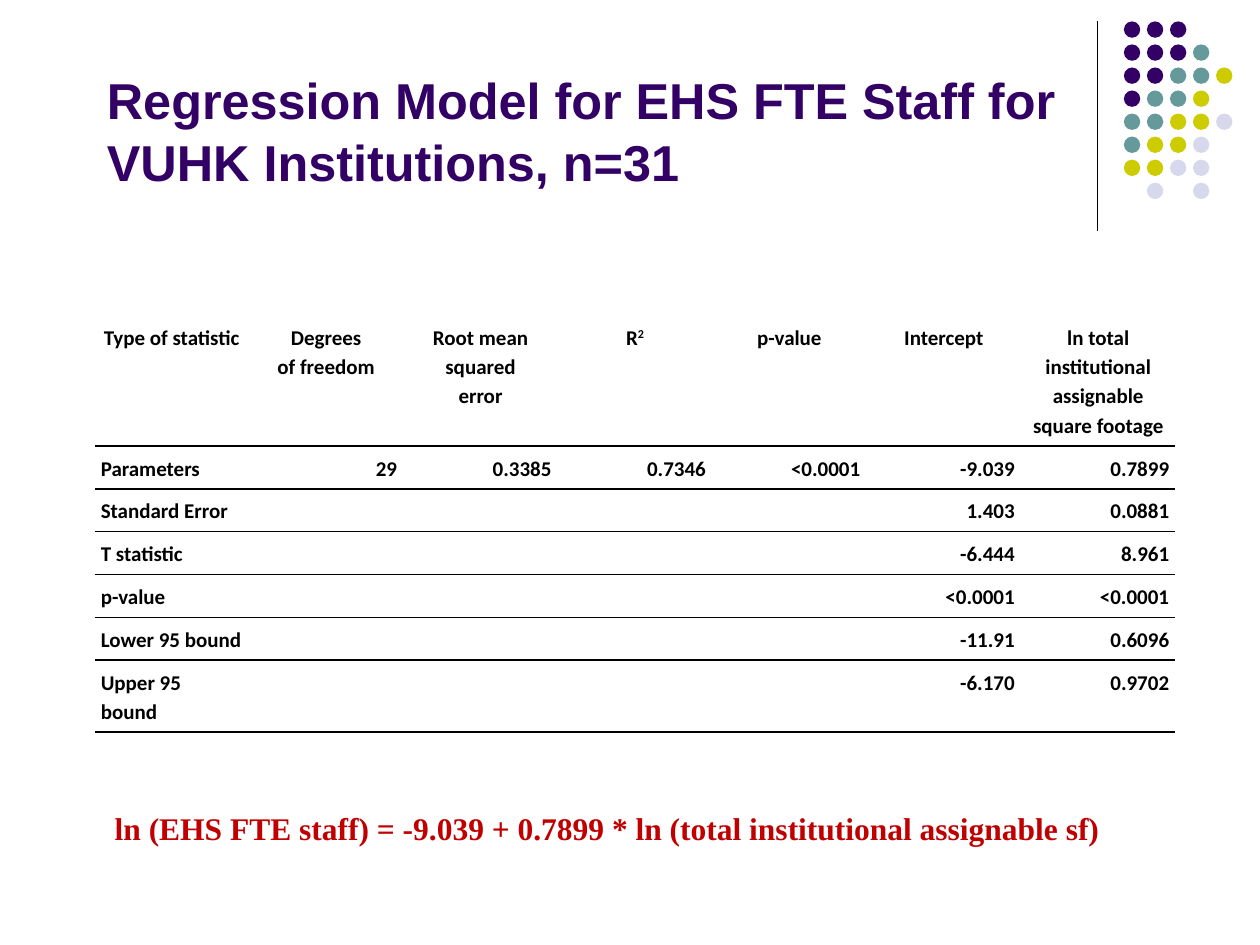
from dataclasses import dataclass

from lxml import etree
from pptx import Presentation
from pptx.dml.color import RGBColor
from pptx.enum.shapes import MSO_CONNECTOR, MSO_SHAPE
from pptx.enum.text import MSO_ANCHOR, PP_ALIGN
from pptx.oxml import parse_xml
from pptx.oxml.ns import nsdecls, qn
from pptx.util import Inches, Pt


@dataclass(frozen=True)
class Theme:
    purple: str = "330066"
    teal: str = "669999"
    lime: str = "CCCC00"
    lavender: str = "D8D8EC"
    black: str = "000000"
    red: str = "C00000"
    title_size: float = 28.8
    formula_size: float = 18
    table_size: float = 12


THEME = Theme()
NO_STYLE = "{2D5ABB26-0587-4C30-8999-92F81FD0307C}"
DOT_COLORS = {"P": THEME.purple, "T": THEME.teal, "Y": THEME.lime, "L": THEME.lavender}
DOT_ROWS = ["PPP", "PPPT", "PPTTY", "PTTY", "TTYYL", "TYYL", "YYLL", ".L.L"]

HEADERS = [
    "Type of statistic",
    "Degrees\nof freedom",
    "Root mean squared\nerror",
    "R",
    "p-value",
    "Intercept",
    "ln total institutional assignable square footage",
]
STATISTICS = [
    ["Parameters", "29", "0.3385", "0.7346", "<0.0001", "-9.039", "0.7899"],
    ["Standard Error", "", "", "", "", "1.403", "0.0881"],
    ["T statistic", "", "", "", "", "-6.444", "8.961"],
    ["p-value", "", "", "", "", "<0.0001", "<0.0001"],
    ["Lower 95 bound", "", "", "", "", "-11.91", "0.6096"],
    ["Upper 95\nbound", "", "", "", "", "-6.170", "0.9702"],
]
ROW_HEIGHTS = [1.04] + [0.34] * 5 + [0.57]


def style_font(font, name, size, color):
    font.name = name
    font.size = Pt(size)
    font.bold = True
    font.color.rgb = RGBColor.from_string(color)


def add_heading(slide, left, top, width, height, text, font, size, color,
                anchor=MSO_ANCHOR.TOP, indent=0.1, spacing=1.0):
    frame = slide.shapes.add_textbox(
        Inches(left), Inches(top), Inches(width), Inches(height)).text_frame
    frame.word_wrap = True
    frame.vertical_anchor = anchor
    frame.margin_left = Inches(indent)
    paragraph = frame.paragraphs[0]
    paragraph.text = text
    paragraph.line_spacing = spacing
    style_font(paragraph.font, font, size, color)


def add_dot_ornament(slide, left, top, height):
    # Vertical rule
    rule = slide.shapes.add_connector(
        MSO_CONNECTOR.STRAIGHT, Inches(left), Inches(top), Inches(left), Inches(top + height))
    rule.line.width = Pt(0.75)
    rule.line.color.rgb = RGBColor.from_string(THEME.black)
    etree.SubElement(rule._element.spPr, qn("a:effectLst"))

    # Dot grid
    pitch, diameter, offset = 0.18, 0.13, 0.21
    pitch = (1.45 - 0.17) / (len(DOT_ROWS) - 1)
    for row, codes in enumerate(DOT_ROWS):
        for col, code in enumerate(codes):
            if code not in DOT_COLORS:
                continue
            dot = slide.shapes.add_shape(
                MSO_SHAPE.OVAL, Inches(left + offset + col * pitch), Inches(top + row * pitch),
                Inches(diameter), Inches(diameter))
            dot.shadow.inherit = False
            dot.fill.solid()
            dot.fill.fore_color.rgb = RGBColor.from_string(DOT_COLORS[code])
            dot.line.fill.background()


def add_bottom_border(cell):
    cell._tc.get_or_add_tcPr().insert(0, parse_xml(
        f'<a:lnB {nsdecls("a")} w="12700"><a:solidFill>'
        f'<a:srgbClr val="{THEME.black}"/></a:solidFill></a:lnB>'))


def fill_cell(cell, text, alignment):
    cell.fill.background()
    add_bottom_border(cell)
    cell.margin_left = cell.margin_right = Inches(0.05)
    # Empty cells need no padding that could stretch their row
    cell.margin_top = cell.margin_bottom = Inches(0.05 if text else 0)
    paragraph = cell.text_frame.paragraphs[0]
    paragraph.text = text
    paragraph.alignment = alignment
    paragraph.line_spacing = 1.15
    style_font(paragraph.font, "Calibri", THEME.table_size, THEME.black)


def add_statistics_table(slide, left, top, width):
    table = slide.shapes.add_table(
        len(STATISTICS) + 1, len(HEADERS), Inches(left), Inches(top),
        Inches(width), Inches(sum(ROW_HEIGHTS))).table
    table.first_row = table.horz_banding = False
    table._tbl.tblPr.find(qn("a:tableStyleId")).text = NO_STYLE
    for row, height in zip(table.rows, ROW_HEIGHTS):
        row.height = Inches(height)

    for col, header in enumerate(HEADERS):
        fill_cell(table.cell(0, col), header, PP_ALIGN.CENTER)
    exponent = table.cell(0, HEADERS.index("R")).text_frame.paragraphs[0].add_run()
    exponent.text = "2"
    exponent.font._element.set("baseline", "30000")

    for row, values in enumerate(STATISTICS, start=1):
        for col, value in enumerate(values):
            alignment = PP_ALIGN.RIGHT if col else PP_ALIGN.LEFT
            fill_cell(table.cell(row, col), value, alignment)


def main():
    prs = Presentation()
    prs.slide_width, prs.slide_height = Inches(10), Inches(7.5)
    slide = prs.slides.add_slide(prs.slide_layouts[6])

    add_dot_ornament(slide, 8.71, 0.17, 1.66)
    add_statistics_table(slide, 0.75, 2.5, 8.58)
    # Title
    add_heading(slide, 0.75, 0.42, 8.48, 1.15,
                "Regression Model for EHS FTE Staff for VUHK Institutions, n=31",
                "Arial", THEME.title_size, THEME.purple,
                anchor=MSO_ANCHOR.BOTTOM, spacing=1.02)
    # Fitted equation
    add_heading(slide, 0.75, 6.37, 8.58, 0.4,
                "ln (EHS FTE staff) = -9.039 + 0.7899 * ln (total institutional assignable sf)",
                "Times New Roman", THEME.formula_size, THEME.red, indent=0.16)
    prs.save("out.pptx")


if __name__ == "__main__":
    main()
